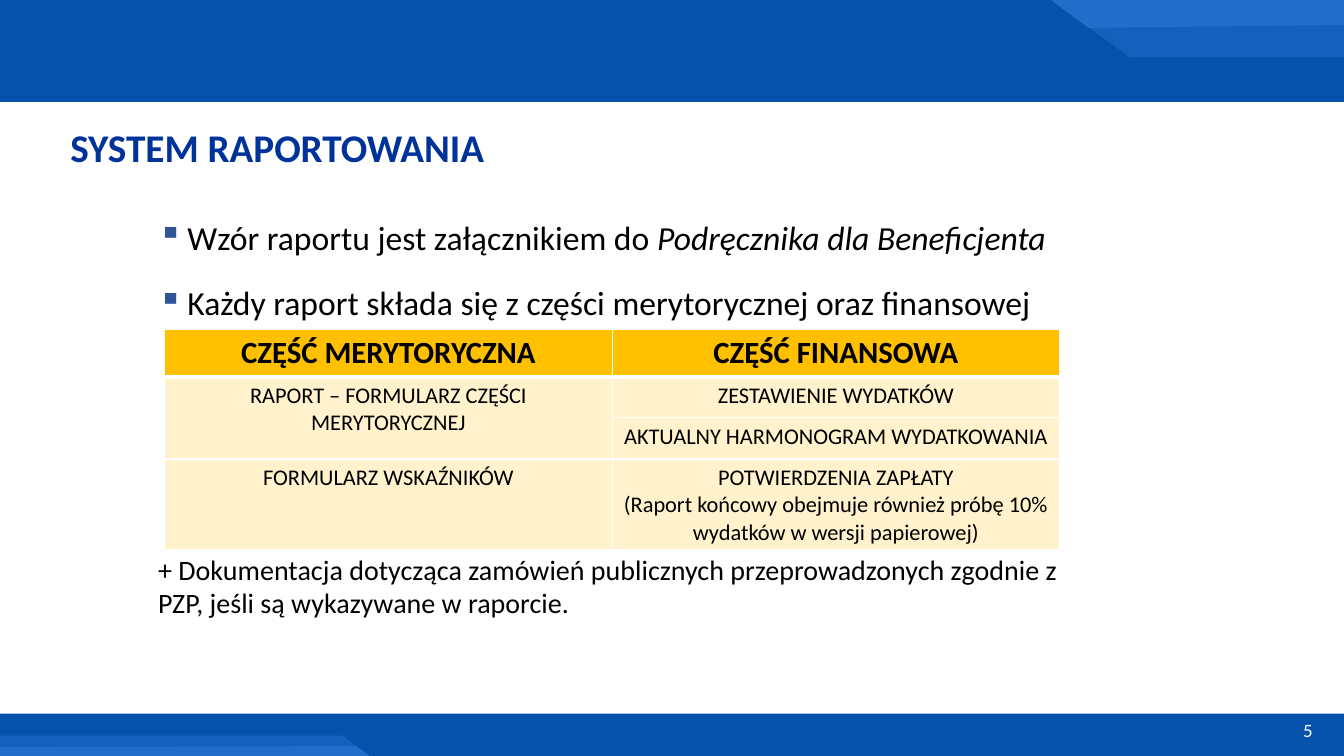
"""Build the slide on the reporting system, laid out on a 100 by 100 grid."""
from lxml.etree import SubElement as Sub
from pptx import Presentation
from pptx.dml.color import RGBColor
from pptx.enum.shapes import MSO_SHAPE as Shape
from pptx.enum.text import PP_ALIGN as Align
from pptx.oxml.ns import qn
from pptx.util import Inches, Pt

rgb = RGBColor.from_string
deck = Presentation()
deck.slide_width, deck.slide_height = Inches(13.33), Inches(7.5)
slide = deck.slides.add_slide(deck.slide_layouts[6])
shapes = slide.shapes


def place(*spots):
    """Turn alternating columns and rows into slide lengths."""
    sides = (deck.slide_width, deck.slide_height) * 2
    return [int(spot * side / 100) for spot, side in zip(spots, sides)]


def write(para, text, size=24, color="000000", bold=False, italic=False,
          align=Align.LEFT, before=0, after=0, line=None, bullet=None):
    """Add one formatted run to a paragraph."""
    para.alignment = align
    para.space_before, para.space_after = Pt(before), Pt(after)
    para.line_spacing = line
    if bullet:
        props = para._p.get_or_add_pPr()
        indent = Inches(0.29)
        props.set("marL", str(indent))
        props.set("indent", str(-indent))
        Sub(Sub(props, qn("a:buClr")), qn("a:srgbClr"), val="2F5597")
        Sub(props, qn("a:buChar"), char=bullet)
    run = para.add_run()
    run.text = text
    font = run.font
    font.name, font.size, font.bold, font.italic = "Calibri", Pt(size), bold, italic
    font.color.rgb = rgb(color)


decor = []
for top, high in ((0, 13.47), (94.4, 5.6)):
    bar = shapes.add_shape(Shape.RECTANGLE, *place(0, top, 100, high))
    decor.append((bar, "0651AC"))

bands = [
    ("1560BD", [(78.2, 0), (84.1, 7.6), (100, 7.6), (100, 0)]),
    ("226DC9", [(78.2, 0), (81, 3.7), (100, 3.3), (100, 0)]),
    ("1560BD", [(0, 100), (27.5, 100), (25.5, 97.3), (0, 97.3)]),
    ("226DC9", [(0, 100), (27.5, 100), (26.5, 98.7), (0, 98.8)]),
]
for color, points in bands:
    start, *rest = [place(*point) for point in points]
    path = shapes.build_freeform(*start)
    path.add_line_segments(rest)
    decor.append((path.convert_to_shape(), color))

for shape, color in decor:
    shape.shadow.inherit = False
    shape.fill.solid()
    shape.fill.fore_color.rgb = rgb(color)
    shape.line.fill.background()

page = shapes.add_textbox(*place(91.35, 94.4, 7.05, 4.4)).text_frame
write(page.paragraphs[0], "5", size=13.5, color="FFFFFF", align=Align.RIGHT)

title = shapes.add_textbox(*place(4.5, 16.4, 89.3, 8.3)).text_frame
title.word_wrap = True
write(title.paragraphs[0], "SYSTEM RAPORTOWANIA", size=28, color="003399",
      bold=True, line=0.9)

rows = [
    (6.1, "CZĘŚĆ MERYTORYCZNA", "CZĘŚĆ FINANSOWA"),
    (5.45, "RAPORT – FORMULARZ CZĘŚCI MERYTORYCZNEJ", "ZESTAWIENIE WYDATKÓW"),
    (5.45, "", "AKTUALNY HARMONOGRAM WYDATKOWANIA"),
    (11.9, "FORMULARZ WSKAŹNIKÓW", "POTWIERDZENIA ZAPŁATY\n"
     "(Raport końcowy obejmuje również próbę 10% wydatków w wersji papierowej)"),
]
table = shapes.add_table(len(rows), 2, *place(12.25, 43.6, 66.6, 28.9)).table
table.cell(1, 0).merge(table.cell(2, 0))
for r, (high, *texts) in enumerate(rows):
    head = r == 0
    table.rows[r].height = place(0, high)[1]
    for c, text in enumerate(texts):
        cell = table.cell(r, c)
        props = cell._tc.get_or_add_tcPr()
        for side in "LRTB":
            thick = 3 if (r, side) in ((0, "B"), (1, "T")) else 1
            edge = Sub(props, qn(f"a:ln{side}"), w=str(Pt(thick)))
            Sub(Sub(edge, qn("a:solidFill")), qn("a:srgbClr"), val="FFFFFF")
        cell.fill.solid()
        cell.fill.fore_color.rgb = rgb("FFC000" if head else "FFF2CC")
        if text:
            frame = cell.text_frame
            for n, part in enumerate(text.split("\n")):
                para = frame.add_paragraph() if n else frame.paragraphs[0]
                write(para, part, size=22 if head else 16, bold=head,
                      align=Align.CENTER)

body = shapes.add_textbox(*place(11.03, 28, 70.3, 56.7)).text_frame
body.word_wrap = True
first = body.paragraphs[0]
write(first, "Wzór raportu jest załącznikiem do ", after=3, bullet="▪")
write(first, "Podręcznika dla Beneficjenta", italic=True, after=3)
write(body.add_paragraph(),
      "Każdy raport składa się z części merytorycznej oraz finansowej",
      before=15, after=3, bullet="▪")
write(body.add_paragraph(),
      "+ Dokumentacja dotycząca zamówień publicznych przeprowadzonych "
      "zgodnie z PZP, jeśli są wykazywane w raporcie.",
      size=20, before=161, after=3)

deck.save("out.pptx")
